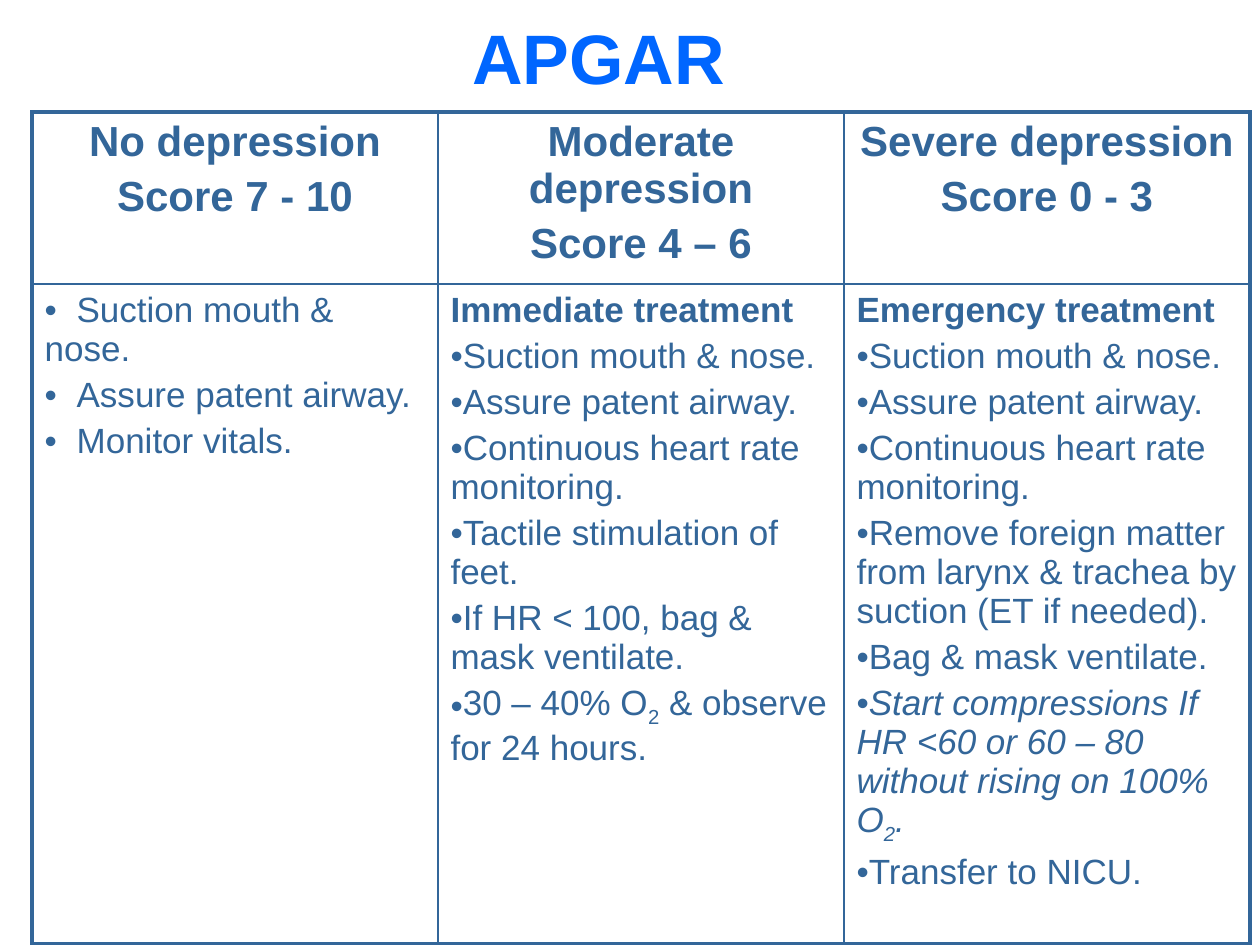
from lxml import etree
from pptx import Presentation
from pptx.dml.color import RGBColor
from pptx.enum.text import MSO_ANCHOR, PP_ALIGN
from pptx.oxml.ns import qn
from pptx.util import Emu, Pt

CENTER, LEFT = PP_ALIGN.CENTER, PP_ALIGN.LEFT
BOTTOM = MSO_ANCHOR.BOTTOM
TITLE_BLUE = RGBColor(0x00, 0x66, 0xFF)
STEEL = RGBColor(0x33, 0x66, 0x99)
FONT = "Arial"
EMU_PER_PX = 914400 / 126
OUTER, INNER = Pt(2.25), Pt(1)
BULLET_TAB = 32

HEADINGS = [
    ("No depression", "Score 7 - 10"),
    ("Moderate depression", "Score 4 – 6"),
    ("Severe depression", "Score 0 - 3"),
]
FIRST_STEPS = ["Suction mouth & nose.", "Assure patent airway."]
MONITORING = "Continuous heart rate monitoring."
# Each column: bold lead, then its steps; |2| marks a subscript
TREATMENTS = [
    (None, FIRST_STEPS + ["Monitor vitals."]),
    ("Immediate treatment", FIRST_STEPS + [
        MONITORING,
        "Tactile stimulation of feet.",
        "If HR < 100, bag & mask ventilate.",
        "30 – 40% O|2| & observe for 24 hours.",
    ]),
    ("Emergency treatment", FIRST_STEPS + [
        MONITORING,
        "Remove foreign matter from larynx & trachea by suction (ET if needed).",
        "Bag & mask ventilate.",
        "Start compressions If HR <60 or 60 – 80 without rising on 100% O|2|.",
        "Transfer to NICU.",
    ]),
]


def px(length):
    return Emu(round(length * EMU_PER_PX))


def add_text(frame, text, size=20, color=STEEL, bold=False, italic=False,
             align=LEFT, bullet=False, tab=0):
    """Fill the empty first paragraph of the frame, or append another."""
    first = not frame.paragraphs[0].runs
    para = frame.paragraphs[0] if first else frame.add_paragraph()
    para.alignment = align
    para.space_before = Pt(0 if first else size * 0.2)
    props = para._p.get_or_add_pPr()
    if bullet:
        props.set("marL", "0")
        props.set("indent", "0")
        etree.SubElement(props, qn("a:buFont"), typeface=FONT)
        etree.SubElement(props, qn("a:buChar"), char="•")
    if tab:
        stops = etree.SubElement(props, qn("a:tabLst"))
        etree.SubElement(stops, qn("a:tab"), pos=str(px(tab)), algn="l")
        text = "\t" + text
    for index, part in enumerate(text.split("|")):
        span = para.add_run()
        span.text = part
        span.font.name = FONT
        span.font.size = Pt(size)
        span.font.bold = bold
        span.font.italic = italic
        span.font.color.rgb = color
        if index % 2:
            span._r.get_or_add_rPr().set("baseline", "-25000")


def set_borders(cell, widths):
    """Draw left, right, top and bottom borders in that order."""
    props = cell._tc.get_or_add_tcPr()
    for index, (side, width) in enumerate(zip("LRTB", widths)):
        line = etree.Element(qn("a:ln" + side), w=str(width))
        fill = etree.SubElement(line, qn("a:solidFill"))
        etree.SubElement(fill, qn("a:srgbClr"), val=str(STEEL))
        props.insert(index, line)


def add_title(page, left, top, width, height):
    box = page.shapes.add_textbox(px(left), px(top), px(width), px(height))
    frame = box.text_frame
    frame.word_wrap = True
    frame.vertical_anchor = BOTTOM
    add_text(frame, "APGAR", size=40, color=TITLE_BLUE, bold=True, align=CENTER)


def add_score_table(page, left, top, width, height, header_height):
    columns = len(HEADINGS)
    table = page.shapes.add_table(
        2, columns, px(left), px(top), px(width), px(height)).table
    table.first_row = table.horz_banding = False
    table.rows[0].height = px(header_height)
    table.rows[1].height = px(height - header_height)

    for index in range(columns):
        table.columns[index].width = px(width / columns)
        heading, body = table.cell(0, index), table.cell(1, index)
        sides = (OUTER if index == 0 else INNER,
                 OUTER if index == columns - 1 else INNER)
        for cell, edges in ((heading, (OUTER, INNER)), (body, (INNER, OUTER))):
            cell.fill.background()
            set_borders(cell, sides + edges)

        # Score heading
        for line in HEADINGS[index]:
            add_text(heading.text_frame, line, size=24, bold=True, align=CENTER)

        # Treatment steps
        lead, steps = TREATMENTS[index]
        if lead:
            add_text(body.text_frame, lead, bold=True)
        for step in steps:
            add_text(body.text_frame, step, bullet=True,
                     italic=step.startswith("Start compressions"),
                     tab=0 if lead else BULLET_TAB)


def main():
    deck = Presentation()
    deck.slide_width, deck.slide_height = px(1260), px(945)
    page = deck.slides.add_slide(deck.slide_layouts[6])
    add_title(page, 63, 10, 1071, 95)
    add_score_table(page, 32, 112, 1218, 820, header_height=161)
    deck.save("out.pptx")


if __name__ == "__main__":
    main()
